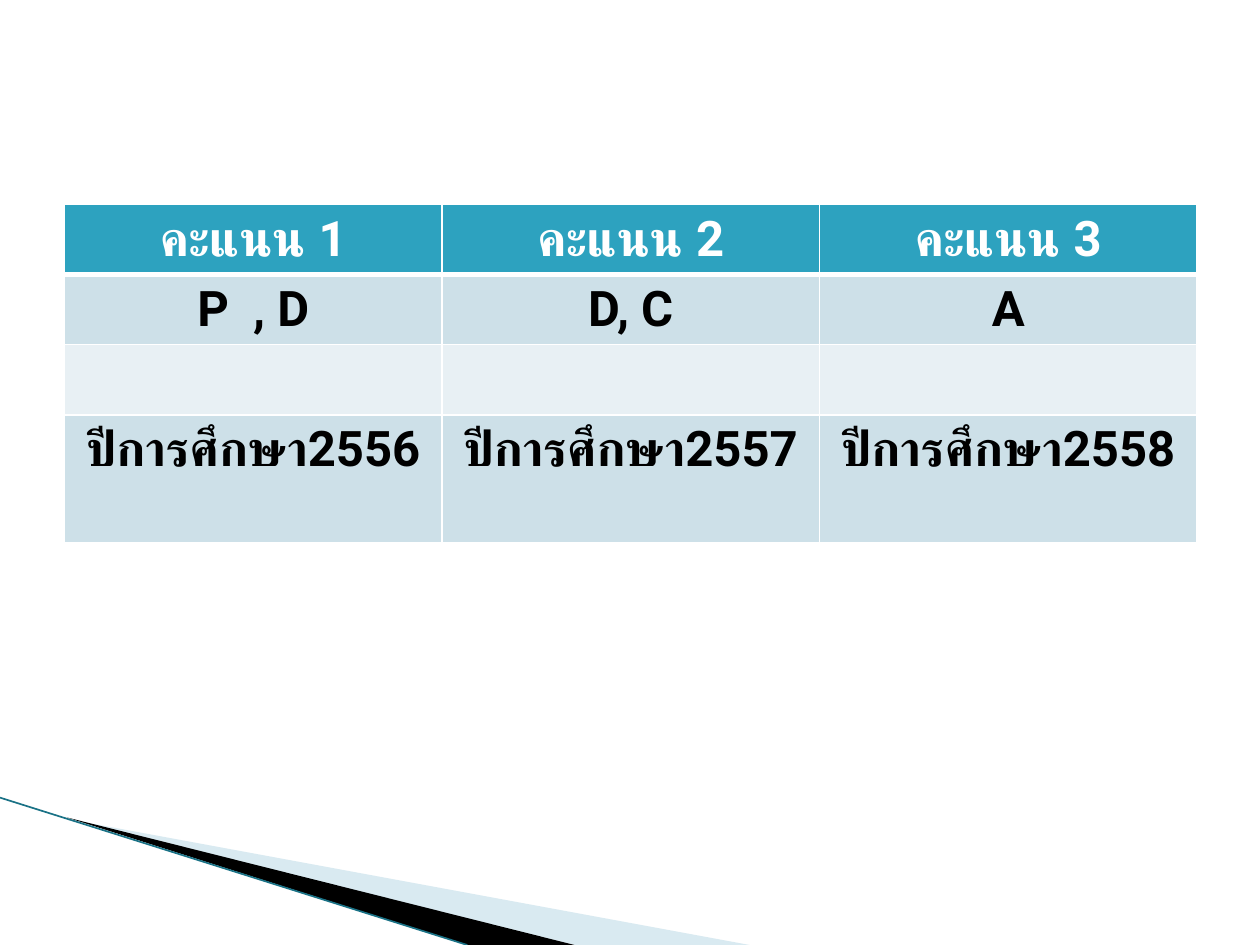
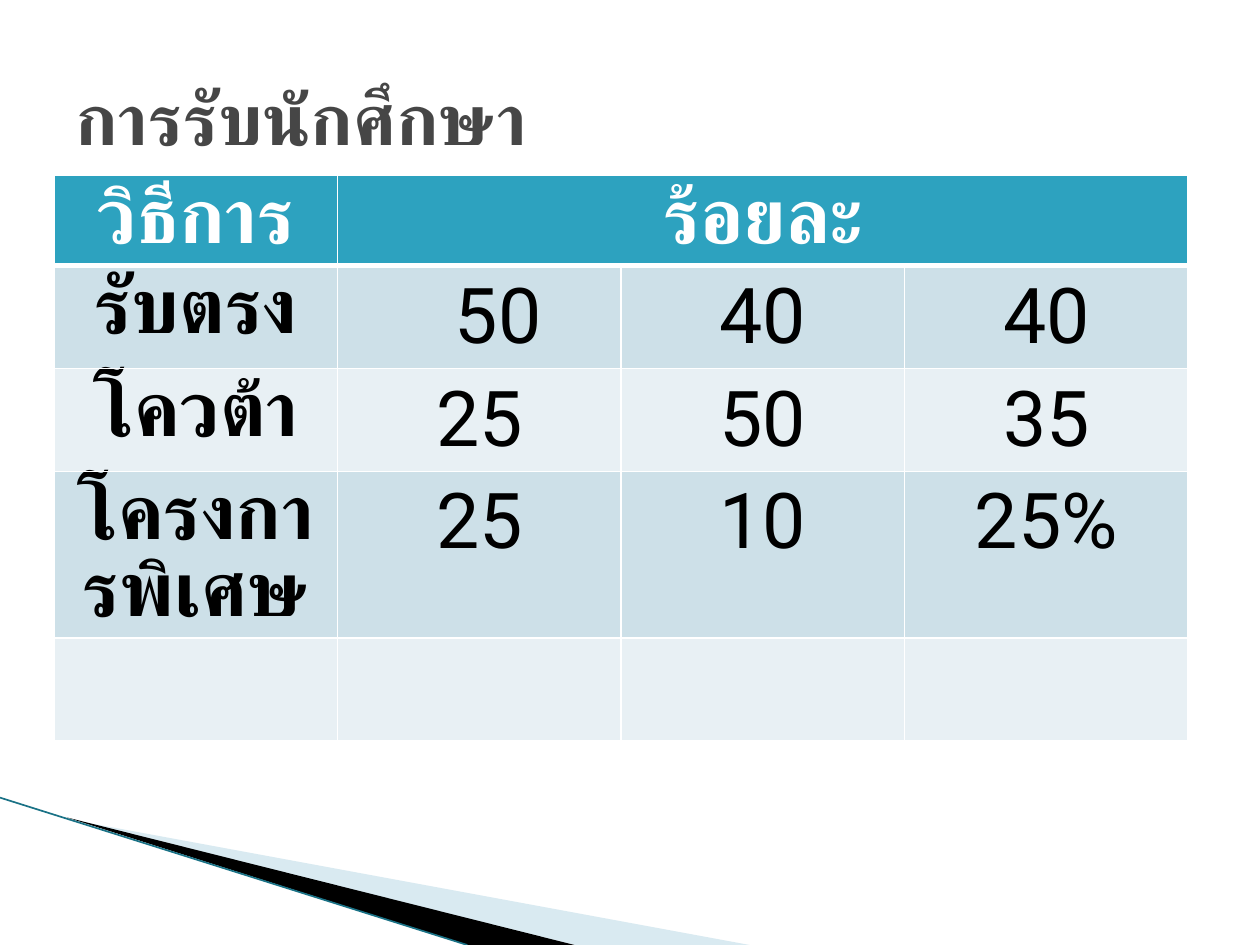
import pptx
import pptx.dml.color
import pptx.enum.shapes
import pptx.enum.text
import pptx.oxml.ns
import pptx.util
from lxml import etree

Cm = pptx.util.Cm
Pt = pptx.util.Pt
qn = pptx.oxml.ns.qn

WHITE, BLACK = "FFFFFF", "000000"
HEADER_FILL = "2DA2BF"
BAND_FILLS = ["E8F0F4", "CDE0E8"]
WEDGE_BLUE, EDGE_TEAL = "A0CBDC", "1A7286"
TITLE_GREY = "464646"
BODY_FONT, TITLE_FONT = "Roboto", "Courier New"
PAGE_WIDTH, PAGE_HEIGHT = 25.4, 19.05
CELL_MARGIN = 0.25


def color(value):
    return pptx.dml.color.RGBColor.from_string(value)


def write_text(frame, text, size=28, font=BODY_FONT, fill=BLACK, bold=True,
               align=pptx.enum.text.PP_ALIGN.CENTER):
    """Put one formatted paragraph into a text frame."""
    para = frame.paragraphs[0]
    para.alignment = align
    span = para.add_run()
    span.text = text
    span.font.name = font
    span.font.size = Pt(size)
    span.font.bold = bold
    span.font.color.rgb = color(fill)


def add_title(page, text):
    box = page.shapes.title
    box.left, box.top, box.width, box.height = Cm(1.27), Cm(0.76), Cm(22.86), Cm(3.18)
    box.text_frame.vertical_anchor = pptx.enum.text.MSO_ANCHOR.MIDDLE
    write_text(box.text_frame, text, size=41, font=TITLE_FONT, fill=TITLE_GREY,
               align=pptx.enum.text.PP_ALIGN.LEFT)


def add_wedge(page, points, fill, opacity=100):
    corners = [(Cm(x), Cm(y)) for x, y in points]
    builder = page.shapes.build_freeform(*corners[0])
    builder.add_line_segments(corners[1:], close=True)
    wedge = builder.convert_to_shape()
    wedge.shadow.inherit = False
    wedge.line.fill.background()
    wedge.fill.solid()
    wedge.fill.fore_color.rgb = color(fill)
    if opacity < 100:
        tint = wedge.fill._xPr.find(".//" + qn("a:srgbClr"))
        etree.SubElement(tint, qn("a:alpha"), val=str(opacity * 1000))


def add_corner_decoration(page):
    """Draw the wedges and the thin edge at the lower left."""
    add_wedge(page, [(1.4, 16.52), (15.11, PAGE_HEIGHT), (11.58, PAGE_HEIGHT)],
              WEDGE_BLUE, opacity=40)
    add_wedge(page, [(1.35, 16.48), (11.58, PAGE_HEIGHT), (9.42, PAGE_HEIGHT)], BLACK)
    edge = page.shapes.add_connector(pptx.enum.shapes.MSO_CONNECTOR.STRAIGHT,
                                     Cm(0), Cm(16.08), Cm(9.42), Cm(PAGE_HEIGHT))
    edge.line.color.rgb = color(EDGE_TEAL)
    edge.line.width = Pt(0.95)
    etree.SubElement(edge._element.spPr, qn("a:effectLst"))


def style_cell(cell, row):
    """Set white borders, thick below the header, and the banded fill."""
    widths = {"L": 1, "R": 1, "T": 3 if row == 1 else 1, "B": 3 if row == 0 else 1}
    properties = cell._tc.get_or_add_tcPr()
    for side, width in widths.items():
        border = etree.SubElement(properties, qn("a:ln" + side), w=str(Pt(width)))
        paint = etree.SubElement(border, qn("a:solidFill"))
        etree.SubElement(paint, qn("a:srgbClr"), val=WHITE)
    cell.fill.solid()
    cell.fill.fore_color.rgb = color(BAND_FILLS[row % 2] if row else HEADER_FILL)
    cell.margin_left = cell.margin_right = Cm(CELL_MARGIN)


def add_table(page, rows, left, top, width, heights, size, bold_values=True):
    """Add a table whose first row is the header and whose columns are equal."""
    count = len(rows[0])
    frame = page.shapes.add_table(len(rows), count, Cm(left), Cm(top),
                                  Cm(width), Cm(sum(heights)))
    table = frame.table
    for column in table.columns:
        column.width = Cm(width / count)
    for row, (texts, height) in enumerate(zip(rows, heights)):
        table.rows[row].height = Cm(height)
        for column, text in enumerate(texts):
            cell = table.cell(row, column)
            style_cell(cell, row)
            if text:
                write_text(cell.text_frame, text, size=size,
                           fill=BLACK if row else WHITE,
                           bold=bold_values or row == 0 or column == 0)
    return table


def add_score_page(deck):
    page = deck.slides.add_slide(deck.slide_layouts[6])
    add_corner_decoration(page)
    rows = [
        [f"คะแนน {score}" for score in (1, 2, 3)],
        ["P  , D", "D, C", "A"],
        [""] * 3,
        [f"ปีการศึกษา{year}" for year in (2556, 2557, 2558)],
    ]
    add_table(page, rows, left=1.3, top=4.12, width=22.83,
              heights=[1.4, 1.4, 1.42, 2.58], size=28)


def add_admission_page(deck):
    page = deck.slides.add_slide(deck.slide_layouts[5])
    add_corner_decoration(page)
    rows = [
        ["วิธีการ", "ร้อยละ", "", ""],
        ["รับตรง", "50", "40", "40"],
        ["โควต้า", "25", "50", "35"],
        ["โครงการพิเศษ", "25", "10", "25%"],
        [""] * 4,
    ]
    table = add_table(page, rows, left=1.09, top=3.53, width=22.86,
                      heights=[1.82, 2.07, 2.07, 3.36, 2.07], size=44,
                      bold_values=False)
    table.cell(0, 1).merge(table.cell(0, 3))
    table.cell(1, 1).margin_left = Cm(CELL_MARGIN + 0.76)
    add_title(page, "การรับนักศึกษา")


def main():
    deck = pptx.Presentation()
    deck.slide_width, deck.slide_height = Cm(PAGE_WIDTH), Cm(PAGE_HEIGHT)
    add_score_page(deck)
    add_admission_page(deck)
    deck.save("out.pptx")


if __name__ == "__main__":
    main()
